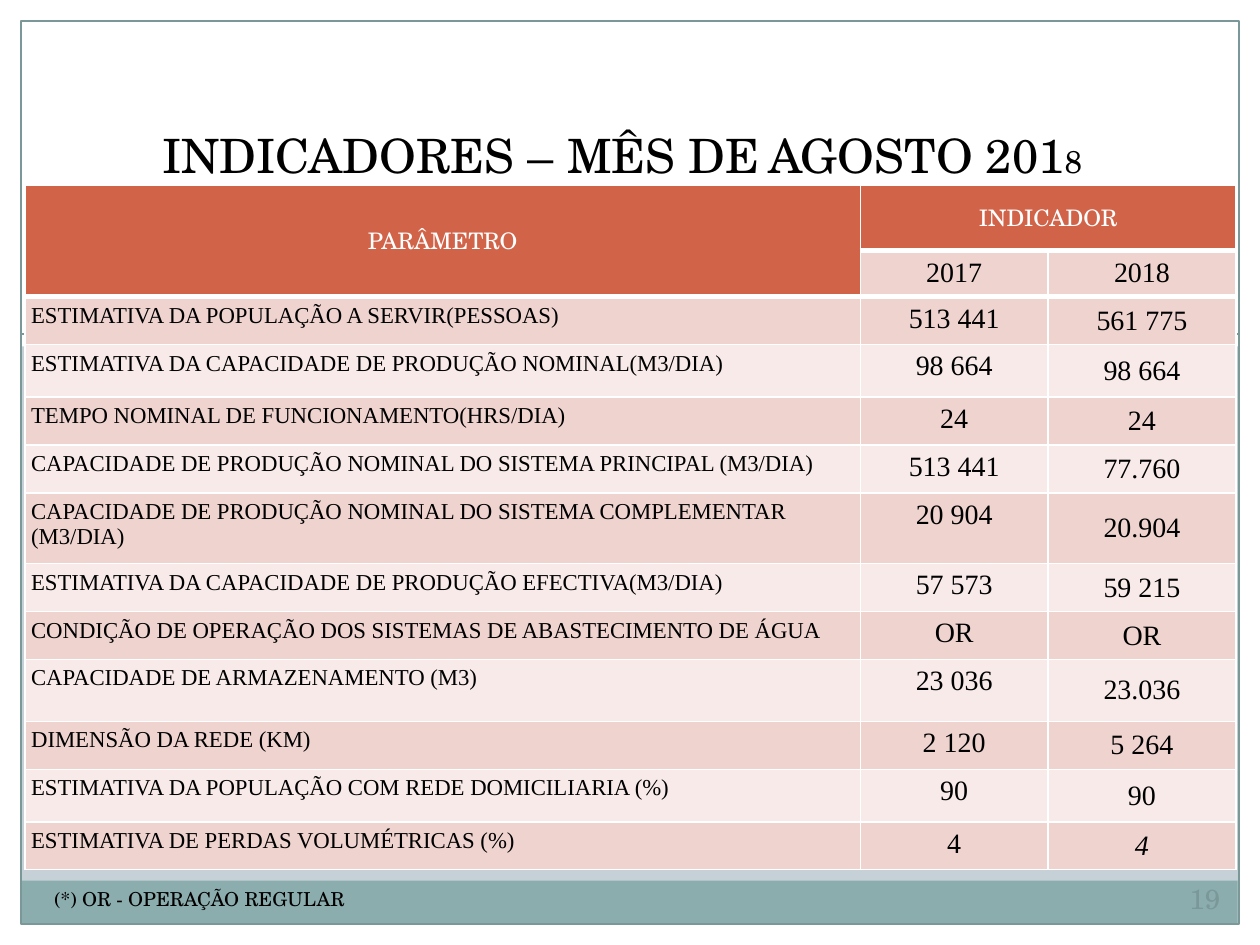
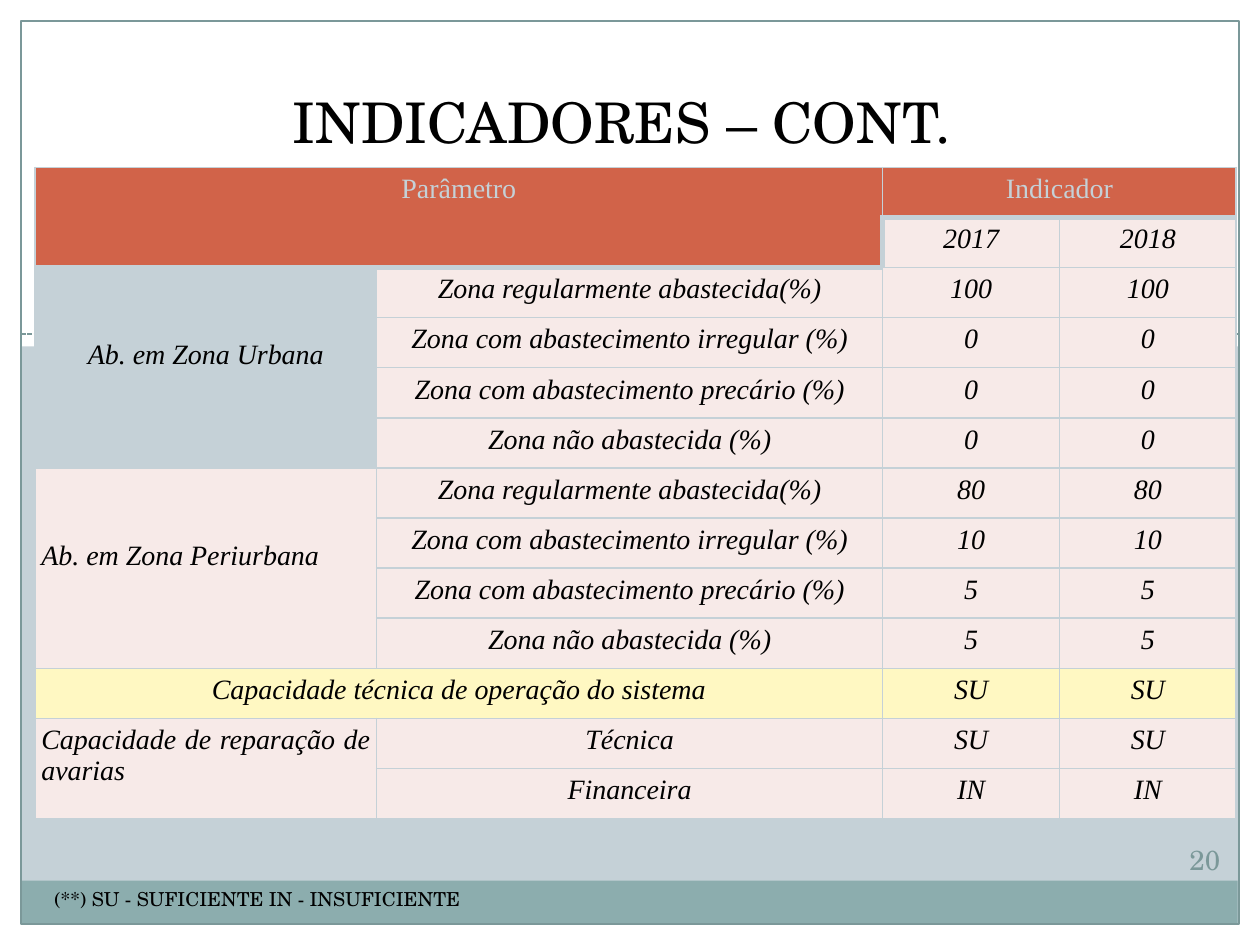
from lxml import etree
from pptx import Presentation
from pptx.dml.color import RGBColor
from pptx.enum import dml, shapes, text
from pptx.oxml import ns
from pptx.util import Pt

HEAD_FONT, BODY_FONT = "TeX Gyre Schola", "Times New Roman"
BLACK, WHITE, MIST, TEAL, SAGE = "000000", "FFFFFF", "C5D1D7", "7B9899", "8CADAE"
RUST, ROSE, BLUSH, PALE, YELLOW = "D16349", "EED3CF", "F7EAE9", "F7EAE8", "FFF8C2"
LEFT, CENTER, JUSTIFY = (text.PP_ALIGN.LEFT, text.PP_ALIGN.CENTER,
                         text.PP_ALIGN.JUSTIFY)
TOP, MIDDLE, BOTTOM = (text.MSO_ANCHOR.TOP, text.MSO_ANCHOR.MIDDLE,
                       text.MSO_ANCHOR.BOTTOM)
CELL_MARGIN = 3.6

SUPPLY = [
    ("ESTIMATIVA DA POPULAÇÃO A SERVIR(PESSOAS)", "513 441", "561 775"),
    ("ESTIMATIVA DA CAPACIDADE DE PRODUÇÃO NOMINAL(M3/DIA)", "98 664", "98 664"),
    ("TEMPO NOMINAL DE FUNCIONAMENTO(HRS/DIA)", "24", "24"),
    ("CAPACIDADE DE PRODUÇÃO NOMINAL DO SISTEMA PRINCIPAL (M3/DIA)",
     "513 441", "77.760"),
    ("CAPACIDADE DE PRODUÇÃO NOMINAL DO SISTEMA COMPLEMENTAR (M3/DIA)",
     "20 904", "20.904"),
    ("ESTIMATIVA DA CAPACIDADE DE PRODUÇÃO EFECTIVA(M3/DIA)", "57 573", "59 215"),
    ("CONDIÇÃO DE OPERAÇÃO DOS SISTEMAS DE ABASTECIMENTO DE ÁGUA", "OR", "OR"),
    ("CAPACIDADE DE ARMAZENAMENTO (M3)", "23 036", "23.036"),
    ("DIMENSÃO DA REDE (KM)", "2 120", "5 264"),
    ("ESTIMATIVA DA POPULAÇÃO COM REDE DOMICILIARIA (%)", "90", "90"),
    ("ESTIMATIVA DE PERDAS VOLUMÉTRICAS (%)", "4", "4"),
]
SUPPLY_HEIGHTS = [37.4, 26.6, 27.4, 30, 27.4, 27.4, 40.4, 27.4, 27.4, 35.4,
                  27.4, 30, 27.4]

ZONE_LEVELS = ["Zona regularmente abastecida(%)",
               "Zona com abastecimento irregular (%)",
               "Zona com abastecimento precário (%)",
               "Zona não abastecida (%)"]
ZONES = {"Ab. em Zona Urbana": ["100", "0", "0", "0"],
         "Ab. em Zona Periurbana": ["80", "10", "5", "5"]}


def rgb(value):
    return RGBColor.from_string(value)


def add_run(p, content, size, color=BLACK, font=HEAD_FONT, italic=False):
    r = p.add_run()
    r.text = content
    r.font.name, r.font.size, r.font.italic = font, Pt(size), italic
    r.font.color.rgb = rgb(color)


def place(sp, left, top, width, height):
    sp.left, sp.top, sp.width, sp.height = map(Pt, (left, top, width, height))


def set_frame(tf, anchor):
    tf.margin_left = tf.margin_right = tf.margin_top = tf.margin_bottom = 0
    tf.word_wrap, tf.auto_size = True, text.MSO_AUTO_SIZE.NONE
    tf.vertical_anchor = anchor


def add_label(s, box, content, size, color, align, anchor):
    sp = s.shapes.add_textbox(*map(Pt, box))
    set_frame(sp.text_frame, anchor)
    p = sp.text_frame.paragraphs[0]
    p.alignment = align
    add_run(p, content, size, color)


def add_rect(s, box, fill=None, line=None):
    sp = s.shapes.add_shape(shapes.MSO_SHAPE.RECTANGLE, *map(Pt, box))
    sp.shadow.inherit = False
    if fill:
        sp.fill.solid()
        sp.fill.fore_color.rgb = rgb(fill)
    else:
        sp.fill.background()
    if line:
        sp.line.color.rgb, sp.line.width = rgb(line), Pt(0.75)
    else:
        sp.line.fill.background()


def add_dashed_line(s, x1, x2, y):
    line = s.shapes.add_connector(shapes.MSO_CONNECTOR.STRAIGHT,
                                  Pt(x1), Pt(y), Pt(x2), Pt(y))
    line.line.color.rgb, line.line.width = rgb(TEAL), Pt(0.9)
    line.line.dash_style = dml.MSO_LINE.SQUARE_DOT
    etree.SubElement(line._element.spPr, ns.qn("a:effectLst"))


def add_slide(prs, title_runs, title_top, title_height, footnote):
    """Add a slide with the shared frame, bands, title and footnote."""
    s = prs.slides.add_slide(prs.slide_layouts[5])
    for margin in [(0, 528, 720, 12), (708, 0, 12, 540), (0, 0, 12, 540),
                   (0, 0, 720, 198)]:
        add_rect(s, margin, WHITE)
    add_rect(s, (11.75, 503.2, 695.5, 24.5), SAGE)
    add_dashed_line(s, 12, 708, 190.8)
    add_rect(s, (12, 12, 696, 516), line=TEAL)

    title = s.shapes.title
    s.shapes._spTree.append(title._element)  # bring in front of the bands
    place(title, 27, title_top, 657, title_height)
    set_frame(title.text_frame, BOTTOM)
    p = title.text_frame.paragraphs[0]
    p.alignment = CENTER
    for content, size in title_runs:
        add_run(p, content, size)
    add_label(s, (31, 507.6, 312, 12.4), footnote, 11, BLACK, LEFT, BOTTOM)
    return s


def add_page_number(s, number, top):
    add_label(s, (670.5, top, 36, 26), number, 15.8, TEAL, CENTER, MIDDLE)


def set_borders(cell, color, widths):
    tc_pr = cell._tc.get_or_add_tcPr()
    for i, (side, width) in enumerate(widths.items()):
        ln = etree.Element(ns.qn(f"a:ln{side}"), w=str(Pt(width)))
        fill = etree.SubElement(ln, ns.qn("a:solidFill"))
        etree.SubElement(fill, ns.qn("a:srgbClr"), val=color)
        tc_pr.insert(i, ln)


def rule_below(row, columns):
    """Cell sides that meet on the heavy rule under a row."""
    return {key for c in columns for key in ((row, c, "B"), (row + 1, c, "T"))}


def add_grid(s, left, top, widths, heights, rows, merges, border, heavy, style):
    """Add a table; style(row, column) gives fill, align, anchor, lift and font."""
    frame = s.shapes.add_table(len(rows), len(widths), Pt(left), Pt(top),
                               Pt(sum(widths)), Pt(sum(heights)))
    table = frame.table
    table.first_row = table.horz_banding = False
    for column, width in zip(table.columns, widths):
        column.width = Pt(width)
    for row, height in zip(table.rows, heights):
        row.height = Pt(height)
    for r1, c1, r2, c2 in merges:
        table.cell(r1, c1).merge(table.cell(r2, c2))
    for r, row in enumerate(rows):
        for c, content in enumerate(row):
            cell = table.cell(r, c)
            fill, align, anchor, lift, font = style(r, c)
            cell.fill.solid()
            cell.fill.fore_color.rgb = rgb(fill)
            set_borders(cell, border, {side: 3 if (r, c, side) in heavy else 1
                                       for side in "LRTB"})
            margin = 0 if cell.is_spanned else CELL_MARGIN
            cell.margin_left = cell.margin_right = cell.margin_top = Pt(margin)
            cell.margin_bottom = Pt(margin + lift)
            cell.vertical_anchor = anchor
            if content:
                p = cell.text_frame.paragraphs[0]
                p.alignment = align
                add_run(p, content, **font)


def supply_style(r, c):
    if r == 0 or (r, c) == (1, 0):
        return RUST, CENTER, MIDDLE, 0, dict(size=13, color=WHITE)
    fill = ROSE if r == 1 or r % 2 == 0 else BLUSH
    font = dict(size=16 if c else 13, font=BODY_FONT, italic=(r, c) == (12, 2))
    anchor = MIDDLE if r == 1 or c == 2 else TOP
    return fill, CENTER if c else LEFT, anchor, 0, font


def zone_style(r, c):
    font = dict(size=16, font=BODY_FONT, italic=True)
    if r == 0 or (r == 1 and c < 2):
        return RUST, CENTER, TOP, 0, dict(size=16, font=BODY_FONT, color=MIST)
    if r == 10:
        return YELLOW, CENTER, TOP, 0, font
    if c == 0 and r < 6:
        return MIST, CENTER, MIDDLE, 14, font
    if c == 0 and r < 10:
        return PALE, LEFT, MIDDLE, 14, font
    return PALE, CENTER if c else JUSTIFY, TOP, 0, font


def zone_rows():
    rows = [("Parâmetro", "", "Indicador", ""), ("", "", "2017", "2018")]
    for zone, values in ZONES.items():
        for i, (level, value) in enumerate(zip(ZONE_LEVELS, values)):
            rows.append(("" if i else zone, level, value, value))
    return rows + [
        ("Capacidade técnica de operação do sistema", "", "SU", "SU"),
        ("Capacidade de reparação de avarias", "Técnica", "SU", "SU"),
        ("", "Financeira", "IN", "IN")]


def main():
    prs = Presentation()
    prs.slide_width, prs.slide_height = Pt(720), Pt(540)
    background = prs.slide_master.background.fill
    background.solid()
    background.fore_color.rgb = rgb(MIST)

    s = add_slide(prs, [("INDICADORES – MÊS DE", 27), (" ", 18),
                        ("AGOSTO 201", 27), ("8", 18)],
                  73.4, 31, "(*) OR - OPERAÇÃO REGULAR")
    rows = [("PARÂMETRO", "INDICADOR", ""), ("", "2017", "2018")] + SUPPLY
    add_grid(s, 14.2, 105.6, [477.4, 107.3, 107.3], SUPPLY_HEIGHTS, rows,
             [(0, 0, 1, 0), (0, 1, 0, 2)], WHITE,
             rule_below(0, range(3)) | rule_below(1, range(3)), supply_style)
    add_page_number(s, "19", 500.4)

    s = add_slide(prs, [("INDICADORES – CONT.", 32)], 52.6, 36,
                  "(**) SU - SUFICIENTE IN - INSUFICIENTE")
    rows = zone_rows()
    heavy = (rule_below(0, range(4)) | rule_below(1, range(2))
             | {(1, 1, "R"), (1, 2, "L")})
    add_grid(s, 20, 95.6, [195.2, 289.2, 101, 101], [28.65] * len(rows), rows,
             [(0, 0, 1, 1), (0, 2, 0, 3), (2, 0, 5, 0), (6, 0, 9, 0),
              (10, 0, 10, 1), (11, 0, 12, 0)], MIST, heavy, zone_style)
    add_page_number(s, "20", 478.2)

    prs.save("out.pptx")


if __name__ == "__main__":
    main()
